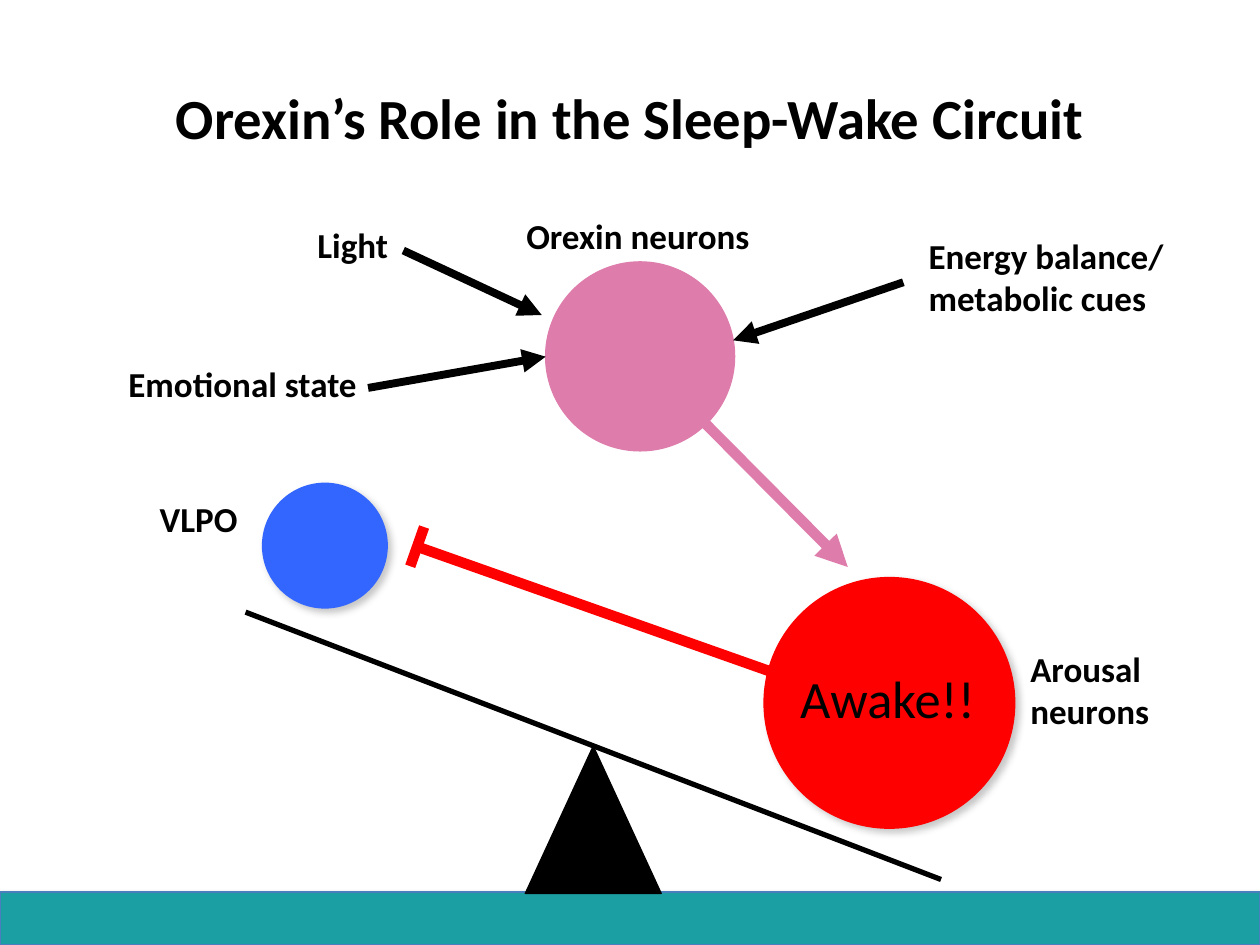
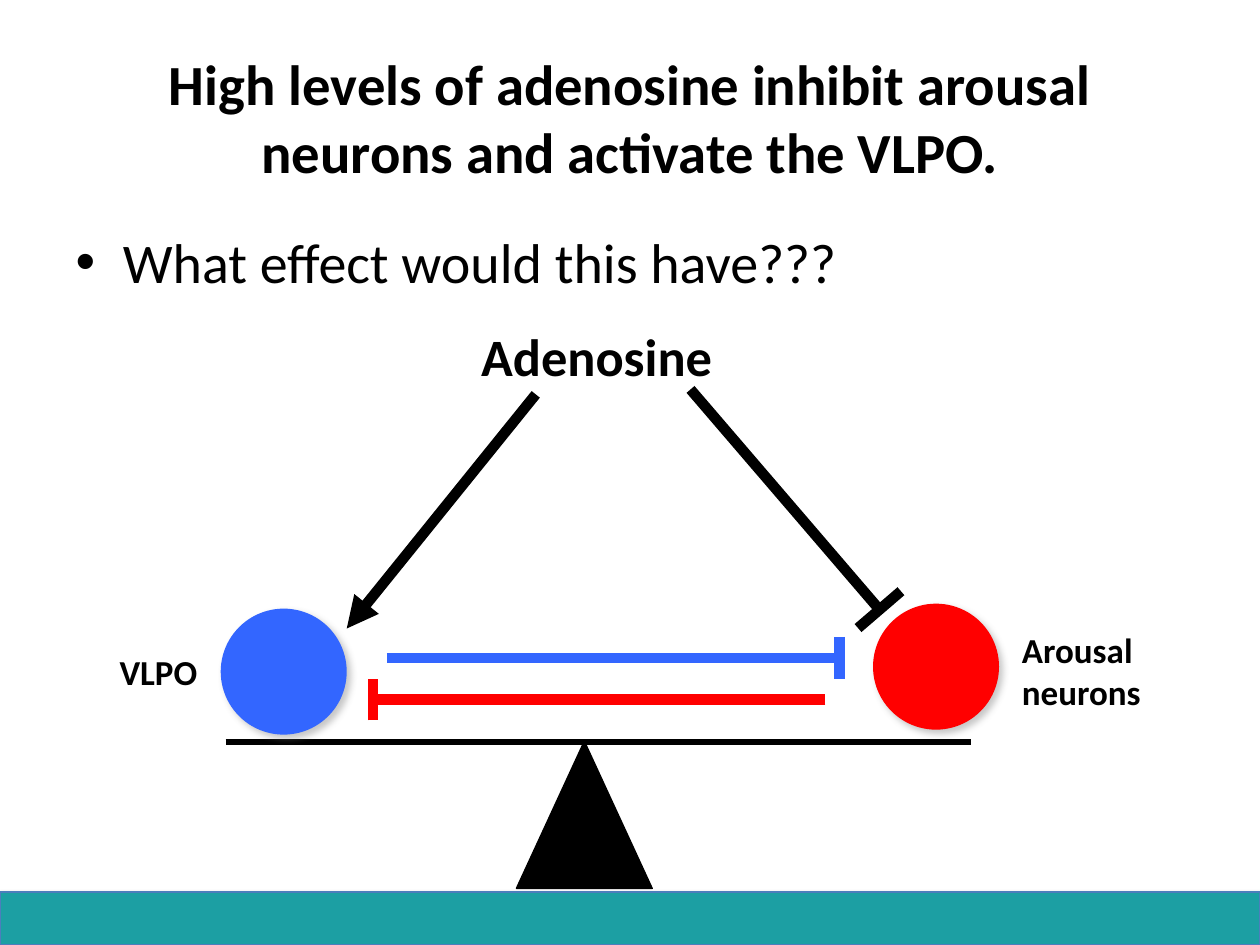
from math import hypot

from lxml.etree import SubElement
from pptx import Presentation
from pptx.dml.color import RGBColor
from pptx.enum.shapes import MSO_CONNECTOR, MSO_SHAPE
from pptx.enum.text import MSO_ANCHOR, MSO_AUTO_SIZE, PP_ALIGN
from pptx.oxml.ns import qn
from pptx.util import Cm, Pt

BLACK, TEAL, TEAL_EDGE = "000000", "1C9FA3", "4B7EBC"
OREXIN, AROUSAL, VLPO = "DE7CAC", "FF0000", "3366FF"

TITLE = {"name": "Calibri", "size": Pt(32.4), "bold": True}
BULLET = {"name": "Calibri", "size": Pt(32), "bold": False}
LABEL = {"name": "Calibri", "size": Pt(20), "bold": True}
BIG_LABEL = {**LABEL, "size": Pt(30)}
SHOUT = {**BIG_LABEL, "bold": False}

# Shadows: colour, opacity in %, blur and distance in points, angle in degrees
CELL_SHADOW = ("808080", 43, 4, 3, 45)
BAND_SHADOW = (BLACK, 35, 3.1, 1.8, 90)


def paint(color_holder, hex_color):
    color_holder.solid()
    color_holder.fore_color.rgb = RGBColor.from_string(hex_color)


def set_text(frame, text, font_format):
    frame.text = text
    for paragraph in frame.paragraphs:
        font = paragraph.runs[0].font
        for attribute, value in font_format.items():
            setattr(font, attribute, value)
        paint(font.fill, BLACK)


def place(shape, left, top, width, height):
    box = {"left": left, "top": top, "width": width, "height": height}
    for attribute, value in box.items():
        setattr(shape, attribute, Cm(value))


def add_shadow(shape, color, opacity, blur, distance, angle):
    effects = shape._element.spPr.find(qn("a:effectLst"))
    shadow = SubElement(effects, qn("a:outerShdw"), blurRad=str(Pt(blur)),
                        dist=str(Pt(distance)), dir=str(angle * 60000),
                        algn="ctr", rotWithShape="0")
    rgb = SubElement(shadow, qn("a:srgbClr"), val=color)
    SubElement(rgb, qn("a:alpha"), val=str(opacity * 1000))


def add_solid(slide, kind, box, fill, edge=None, shadow=None):
    solid = slide.shapes.add_shape(kind, *map(Cm, box))
    solid.shadow.inherit = False
    paint(solid.fill, fill)
    if edge:
        paint(solid.line.fill, edge)
        solid.line.width = Pt(0.75)
    else:
        solid.line.fill.background()
    if shadow:
        add_shadow(solid, *shadow)
    return solid


def add_cell(slide, left, top, diameter, color, edge=None, shadow=CELL_SHADOW):
    add_solid(slide, MSO_SHAPE.OVAL, (left, top, diameter, diameter),
              color, edge, shadow)


def add_label(slide, text, left, top, width, height=1.12,
              font_format=LABEL, wrap=False):
    frame = slide.shapes.add_textbox(*map(Cm, (left, top, width, height))).text_frame
    set_text(frame, text, font_format)
    frame.word_wrap = wrap
    frame.auto_size = MSO_AUTO_SIZE.SHAPE_TO_FIT_TEXT


def add_line(shapes, start, end, color=BLACK, width=3, arrow=False):
    line = shapes.add_connector(MSO_CONNECTOR.STRAIGHT, *map(Cm, start + end))
    paint(line.line.fill, color)
    line.line.width = Pt(width)
    if arrow:
        SubElement(line.line._get_or_add_ln(), qn("a:tailEnd"), type="triangle")
    SubElement(line._element.spPr, qn("a:effectLst"))


def add_inhibition(slide, start, end, color, bar=0.84):
    """Line that stops at a crossbar, square to it and centred on its end."""
    group = slide.shapes.add_group_shape()
    add_line(group.shapes, start, end, color, 6)
    dx, dy = end[0] - start[0], end[1] - start[1]
    scale = bar / 2 / hypot(dx, dy)
    x, y = -dy * scale, dx * scale
    add_line(group.shapes, (end[0] - x, end[1] - y), (end[0] + x, end[1] + y),
             color, 6)


def add_seesaw(slide, beam_start, beam_end, pivot_left, pivot_top):
    add_line(slide.shapes, beam_start, beam_end)
    add_solid(slide, MSO_SHAPE.ISOSCELES_TRIANGLE,
              (pivot_left, pivot_top, 2.74, 2.97), BLACK, BLACK)


def add_titled_slide(deck, layout_index, title_text):
    slide = deck.slides.add_slide(deck.slide_layouts[layout_index])
    title = slide.shapes.title
    place(title, 1.27, 0.76, 22.86, 3.18)
    frame = title.text_frame
    set_text(frame, title_text, TITLE)
    frame.paragraphs[0].alignment = PP_ALIGN.CENTER
    frame.vertical_anchor = MSO_ANCHOR.MIDDLE
    frame.auto_size = MSO_AUTO_SIZE.NONE
    return slide


def move_band_to_master(deck, slide):
    band = add_solid(slide, MSO_SHAPE.RECTANGLE, (0, 17.98, 25.4, 1.07),
                     TEAL, TEAL_EDGE, BAND_SHADOW)
    band._element.nvSpPr.cNvPr.set("id", "100")
    deck.slide_master.shapes._spTree.insert(2, band._element)


def build_orexin_slide(deck):
    slide = add_titled_slide(deck, 5, "Orexin’s Role in the Sleep-Wake Circuit")
    move_band_to_master(deck, slide)
    add_seesaw(slide, (4.95, 12.34), (18.97, 17.73), 10.59, 15.04)

    # Inputs to the orexin neurons
    add_cell(slide, 11, 5.28, 3.81, OREXIN, OREXIN, None)
    add_label(slide, "Orexin neurons", 10.36, 4.19, 5.51, wrap=True)
    add_label(slide, "Energy balance/\nmetabolic cues", 18.47, 4.6, 5.46, 1.96)
    add_label(slide, "Light", 6.15, 4.39, 1.96)
    add_label(slide, "Emotional state", 2.34, 7.19, 5.28)
    for start, end in (((8.13, 5.05), (10.92, 6.35)),
                       ((7.42, 7.82), (11, 7.19)),
                       ((18.21, 5.69), (14.78, 6.86))):
        add_line(slide.shapes, start, end, BLACK, 4.5, arrow=True)

    # Arousal neurons outweigh the VLPO
    add_cell(slide, 15.39, 11.63, 5.08, AROUSAL)
    add_label(slide, "Arousal\nneurons", 20.52, 12.93, 2.97, 1.96)
    add_inhibition(slide, (16.05, 13.72), (8.41, 11.02), AROUSAL)
    add_cell(slide, 5.28, 9.73, 2.54, VLPO)
    add_label(slide, "VLPO", 2.97, 9.91, 2.08)
    add_line(slide.shapes, (13.13, 7.44), (17.09, 11.43), OREXIN, 6, arrow=True)
    add_label(slide, "Awake!!", 15.88, 13.31, 4.19, 1.55, SHOUT)


def build_adenosine_slide(deck):
    slide = add_titled_slide(
        deck, 1,
        "High levels of adenosine inhibit arousal neurons and activate the VLPO.")
    question = slide.placeholders[1]
    place(question, 1.27, 4.45, 22.86, 1.7)
    set_text(question.text_frame, "What effect would this have???", BULLET)

    # Adenosine acts on both sides
    add_label(slide, "Adenosine", 9.45, 6.4, 5.51, 1.55, BIG_LABEL, wrap=True)
    add_inhibition(slide, (13.92, 7.85), (17.73, 12.29), BLACK, bar=1.14)
    add_line(slide.shapes, (10.8, 7.95), (6.99, 12.67), BLACK, 6, arrow=True)

    # Balanced cells inhibiting each other
    add_seesaw(slide, (4.55, 14.96), (19.58, 14.96), 10.41, 14.94)
    add_cell(slide, 17.6, 12.17, 2.54, AROUSAL)
    add_cell(slide, 4.45, 12.27, 2.54, VLPO)
    add_inhibition(slide, (7.8, 13.26), (16.92, 13.26), VLPO)
    add_inhibition(slide, (16.64, 14.1), (7.52, 14.1), AROUSAL)
    add_label(slide, "Arousal\nneurons", 20.35, 12.55, 2.97, 1.96)
    add_label(slide, "VLPO", 2.16, 12.98, 2.08)


def main():
    deck = Presentation()
    deck.slide_width, deck.slide_height = Cm(25.4), Cm(19.05)
    build_orexin_slide(deck)
    build_adenosine_slide(deck)
    deck.save("out.pptx")


if __name__ == "__main__":
    main()
